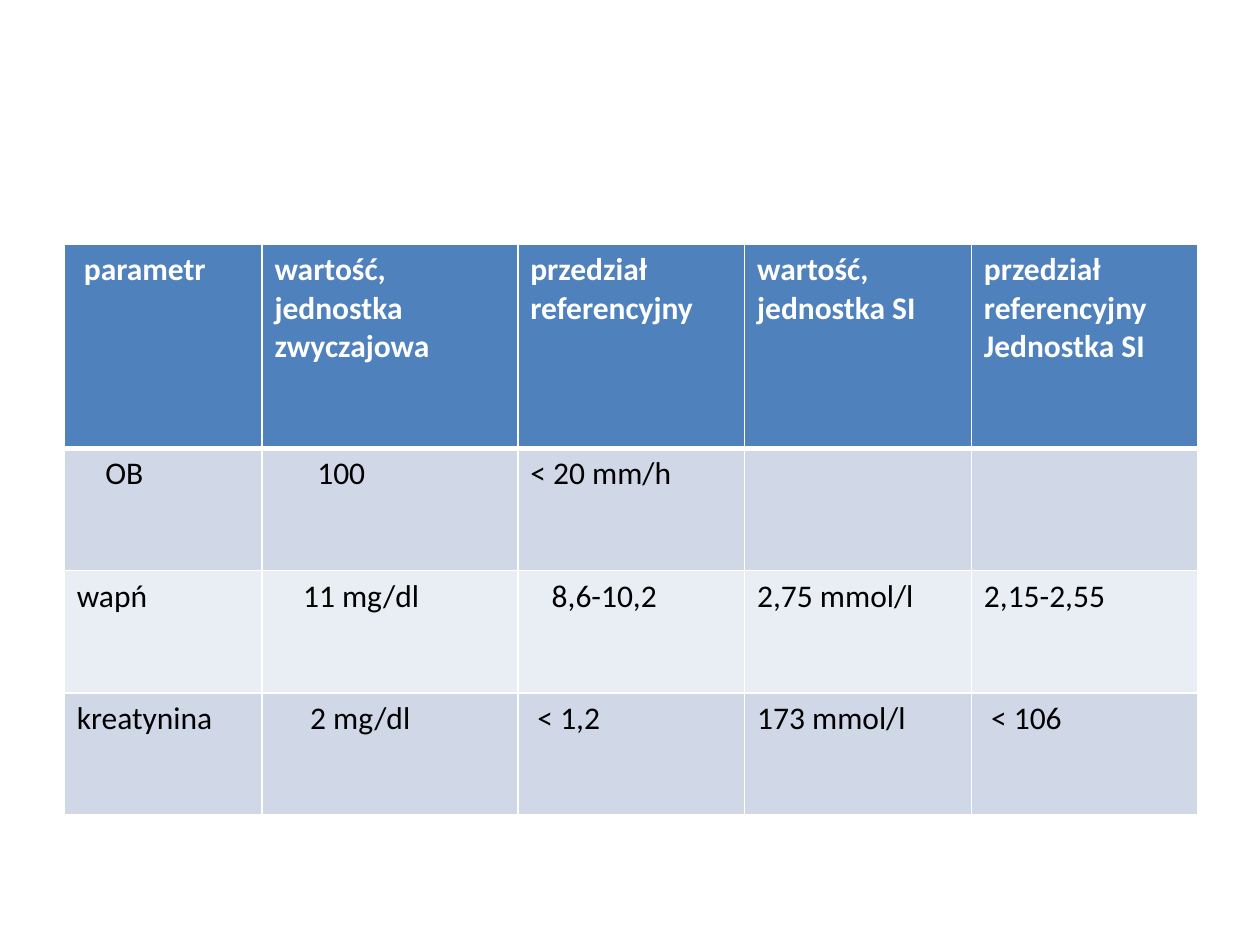
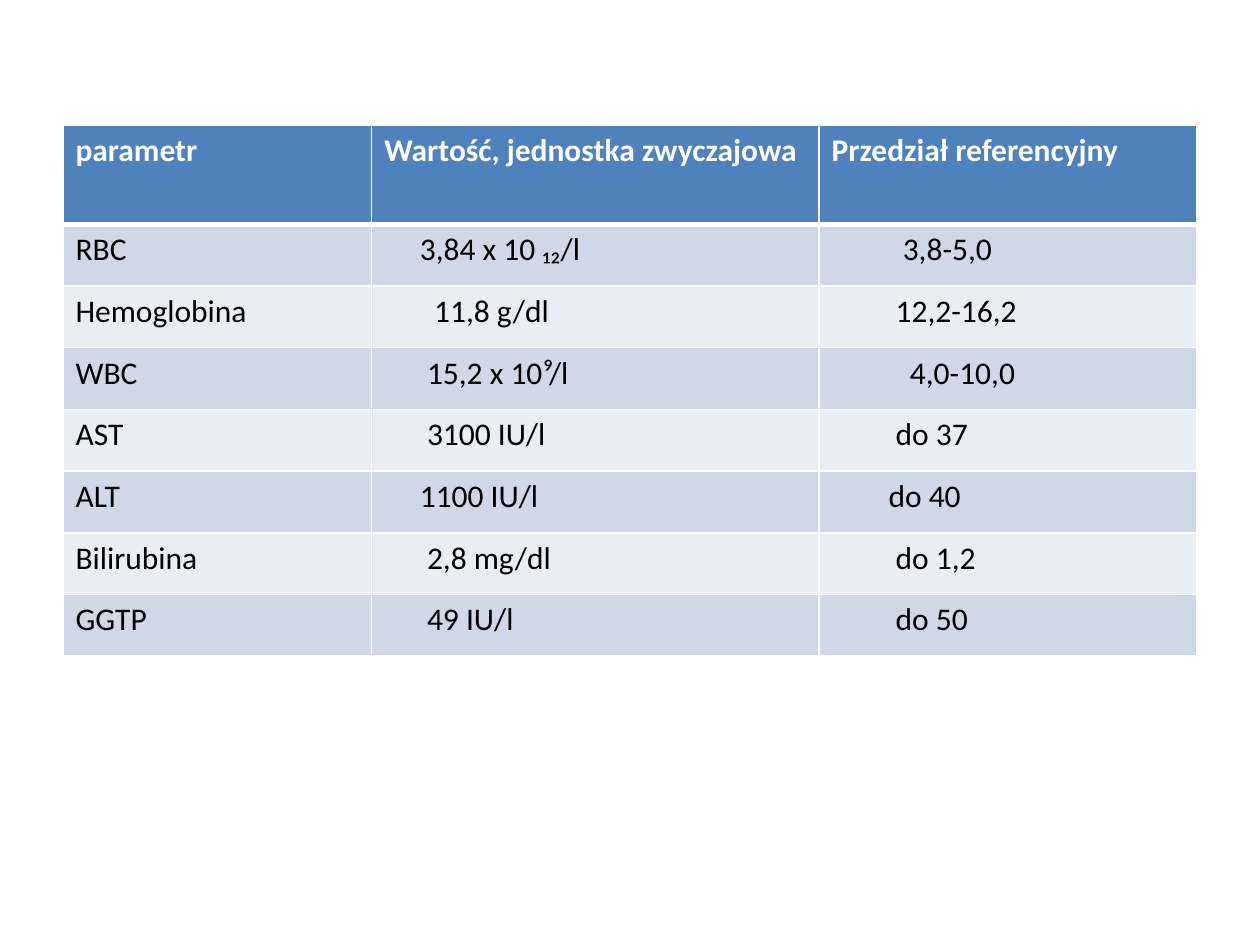
from lxml import etree
from pptx import Presentation
from pptx.dml.color import RGBColor
from pptx.oxml.ns import qn
from pptx.util import Inches, Pt

COLORS = {
    "header": "4F81BD",
    "odd": "D0D8E8",
    "even": "E9EDF4",
    "border": "FFFFFF",
    "header_text": "FFFFFF",
    "body_text": "000000",
}
FONT = "Calibri"
TEXT_SIZE = 18
SLIDE_W, SLIDE_H = Inches(10), Inches(7.5)
BLANK_LAYOUT = 6
CELL_MARGIN = Inches(0.1)
INDENT_STEP = Pt(4.07)
THIN, THICK = 1, 3

# A cell is its text, or a pair of text and number of indent steps.
CHEMISTRY = [
    [("parametr", 1), "wartość, jednostka zwyczajowa", "przedział referencyjny",
     "wartość, jednostka SI", "przedział referencyjny\nJednostka SI"],
    [("OB", 4), ("100", 6), "< 20 mm/h", "", ""],
    ["wapń", ("11 mg/dl", 4), ("8,6-10,2", 3), "2,75 mmol/l", "2,15-2,55"],
    ["kreatynina", ("2 mg/dl", 5), ("< 1,2", 1), "173 mmol/l", ("< 106", 1)],
]
BLOOD_AND_LIVER = [
    ["parametr", "Wartość, jednostka zwyczajowa", "Przedział referencyjny"],
    ["RBC", ("3,84 x 10 ₁₂/l", 5), ("3,8-5,0", 10)],
    ["Hemoglobina", ("11,8 g/dl", 7), ("12,2-16,2", 9)],
    ["WBC", ("15,2 x 10⁹/l", 6), ("4,0-10,0", 11)],
    ["AST", ("3100 IU/l", 6), ("do 37", 9)],
    ["ALT", ("1100 IU/l", 5), ("do 40", 8)],
    ["Bilirubina", ("2,8 mg/dl", 6), ("do 1,2", 9)],
    ["GGTP", ("49 IU/l", 6), ("do 50", 9)],
]


def write_text(tf, text, color, size=TEXT_SIZE, bold=False):
    """Write each line of text as a paragraph of its own."""
    tf.word_wrap = True
    for i, line in enumerate(text.split("\n")):
        p = tf.paragraphs[0] if i == 0 else tf.add_paragraph()
        r = p.add_run()
        r.text = line
        r.font.name = FONT
        r.font.size = Pt(size)
        r.font.bold = bold
        r.font.color.rgb = RGBColor.from_string(COLORS[color])


def set_borders(cell, top, bottom):
    """Draw the four cell borders; top and bottom are widths in points."""
    tcPr = cell._tc.get_or_add_tcPr()
    for side, width in (("L", THIN), ("R", THIN), ("T", top), ("B", bottom)):
        ln = etree.SubElement(tcPr, qn(f"a:ln{side}"), w=str(Pt(width)))
        fill = etree.SubElement(ln, qn("a:solidFill"))
        etree.SubElement(fill, qn("a:srgbClr"), val=COLORS["border"])


def fill_cell(cell, content, row):
    text, steps = content if isinstance(content, tuple) else (content, 0)
    is_header = row == 0
    band = "header" if is_header else "odd" if row % 2 else "even"
    set_borders(cell, top=THICK if row == 1 else THIN,
                bottom=THICK if is_header else THIN)
    cell.fill.solid()
    cell.fill.fore_color.rgb = RGBColor.from_string(COLORS[band])
    cell.margin_left = CELL_MARGIN + INDENT_STEP * steps
    write_text(cell.text_frame, text, bold=is_header,
               color="header_text" if is_header else "body_text")


def add_results_slide(prs, rows, left, top, col_widths, header_h, row_h):
    """Add a slide with one banded table; lengths are in inches."""
    slide = prs.slides.add_slide(prs.slide_layouts[BLANK_LAYOUT])
    heights = [header_h] + [row_h] * (len(rows) - 1)
    table = slide.shapes.add_table(
        len(rows), len(col_widths), Inches(left), Inches(top),
        Inches(sum(col_widths)), Inches(sum(heights))).table
    for column, width in zip(table.columns, col_widths):
        column.width = Inches(width)
    for i, (height, contents) in enumerate(zip(heights, rows)):
        table.rows[i].height = Inches(height)
        for j, content in enumerate(contents):
            fill_cell(table.cell(i, j), content, i)


def main():
    prs = Presentation()
    prs.slide_width, prs.slide_height = SLIDE_W, SLIDE_H
    add_results_slide(prs, CHEMISTRY, left=0.51, top=1.94,
                      col_widths=[1.57, 2.03] + [1.8] * 3,
                      header_h=1.62, row_h=0.97)
    add_results_slide(prs, BLOOD_AND_LIVER, left=0.5, top=0.99,
                      col_widths=[2.45, 3.55, 3],
                      header_h=0.79, row_h=0.49)
    prs.save("out.pptx")


if __name__ == "__main__":
    main()
